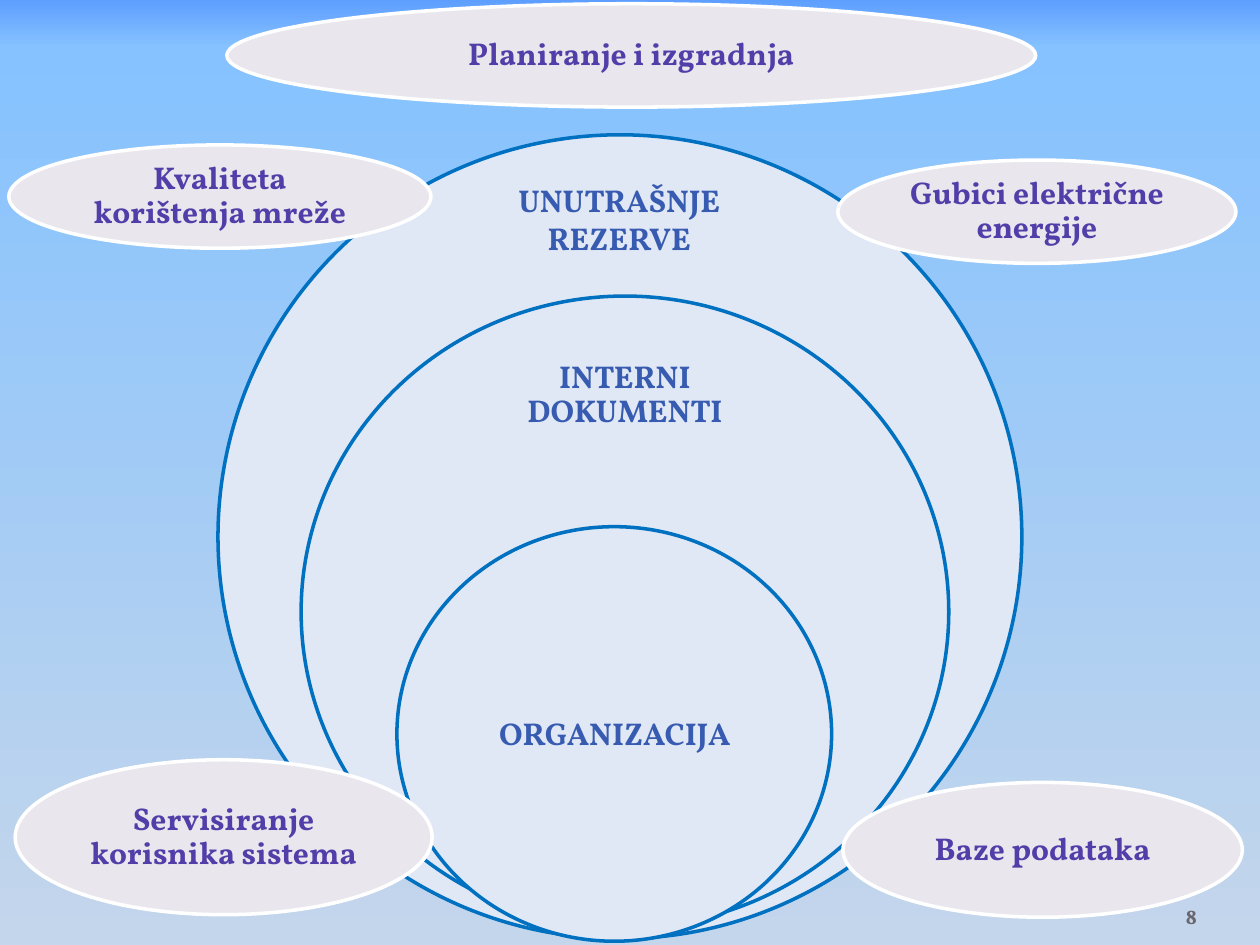
from lxml import etree
from pptx import Presentation
from pptx.dml.color import RGBColor
from pptx.enum import shapes, text
from pptx.oxml.ns import qn
from pptx.util import Inches, Pt

SKY = (("0", "5E9EFF"), ("5000", "85C2FF"), ("100000", "C4D6EB"))
PALE_BLUE = RGBColor(0xE0, 0xE7, 0xF5)
RING_BLUE = RGBColor(0x00, 0x70, 0xC0)
TEXT_BLUE = RGBColor(0x37, 0x5B, 0xB0)
PALE_GREY = RGBColor(0xE9, 0xE7, 0xED)
WHITE = RGBColor(0xFF, 0xFF, 0xFF)
VIOLET = RGBColor(0x53, 0x3E, 0xA9)
GREY = RGBColor(0x69, 0x67, 0x6D)
INSET = 0.1464

prs = Presentation()
prs.slide_width, prs.slide_height = Inches(10), Inches(7.5)
s = prs.slides.add_slide(prs.slide_layouts[6])

fill = s.background.fill
fill.gradient()
fill.gradient_angle = 270
stops = fill.gradient_stops[0]._gs.getparent()
for gs in list(stops):
    stops.remove(gs)
for pos, color in SKY:
    gs = etree.SubElement(stops, qn("a:gs"), pos=pos)
    etree.SubElement(gs, qn("a:srgbClr"), val=color)


def add_ellipse(box, color, line):
    sp = s.shapes.add_shape(shapes.MSO_SHAPE.OVAL, *map(Inches, box))
    sp.shadow.inherit = False
    sp.fill.solid()
    sp.fill.fore_color.rgb = color
    sp.line.color.rgb = line
    sp.line.width = Pt(2)


def add_text(words, box, color, size=18, margins=(0.03, 0.03), spacing=0.9,
             align=text.PP_ALIGN.CENTER, anchor=text.MSO_ANCHOR.MIDDLE):
    tf = s.shapes.add_textbox(*map(Inches, box)).text_frame
    tf.word_wrap = True
    tf.vertical_anchor = anchor
    tf.margin_left = tf.margin_right = Inches(margins[0])
    tf.margin_top = tf.margin_bottom = Inches(margins[1])
    p = tf.paragraphs[0]
    p.alignment = align
    p.line_spacing = spacing
    r = p.add_run()
    r.text = words
    r.font.name = "Vollkorn"
    r.font.size = Pt(size)
    r.font.bold = True
    r.font.color.rgb = color


rings = [
    ("UNUTRAŠNJE REZERVE", (1.73, 1.07, 6.38, 6.38), (3.8, 1.26, 2.23, 0.96), 0.14, 1.0),
    ("INTERNI DOKUMENTI", (2.39, 2.35, 5.14, 5.01), (3.76, 2.67, 2.4, 0.94), 0.14, 0.9),
    ("ORGANIZACIJA", (3.15, 4.18, 3.45, 3.29), (3.66, 5.01, 2.44, 1.65), 0.11, 0.9),
]
for words, ring, box, margin, spacing in rings:
    add_ellipse(ring, PALE_BLUE, RING_BLUE)
    add_text(words, box, TEXT_BLUE, margins=(margin, margin), spacing=spacing)

topics = [
    ("Gubici električne energije", (6.65, 1.27, 3.16, 0.82)),
    ("Baze podataka", (6.69, 6.21, 3.17, 1.07)),
    ("Planiranje i izgradnja", (1.8, 0.03, 6.42, 0.82)),
    ("Kvaliteta korištenja mreže", (0.07, 1.15, 3.35, 0.82)),
    ("Servisiranje korisnika sistema", (0.12, 6.03, 3.31, 1.23)),
]
for words, (x, y, w, h) in topics:
    add_ellipse((x, y, w, h), PALE_GREY, WHITE)
    inner = (x + INSET * w, y + INSET * h, w * (1 - 2 * INSET), h * (1 - 2 * INSET))
    add_text(words, inner, VIOLET)

add_text("8", (8.67, 7.02, 0.83, 0.4), GREY, size=12, margins=(0, 0.05), spacing=1.0,
         align=text.PP_ALIGN.RIGHT, anchor=text.MSO_ANCHOR.BOTTOM)

prs.save("out.pptx")
